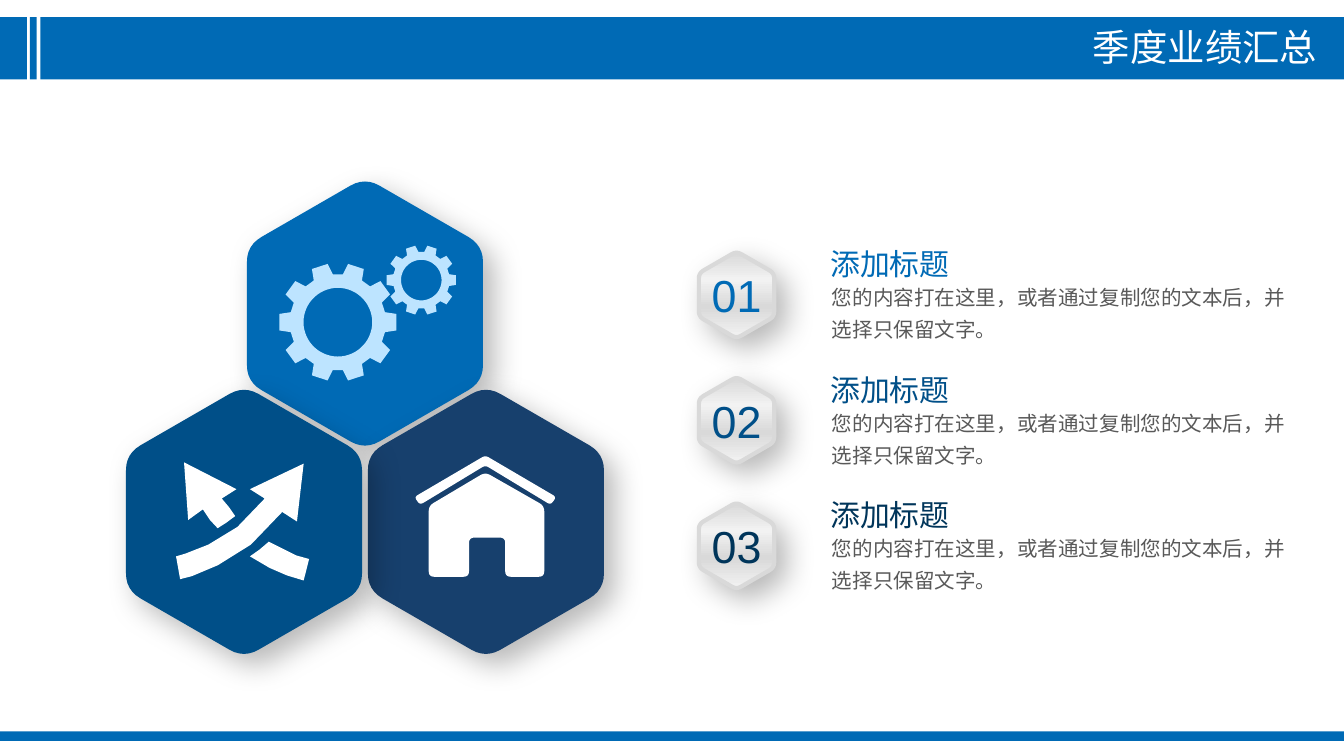
from math import cos, pi, sin

from pptx import Presentation
from pptx.dml.color import RGBColor
from pptx.enum.shapes import MSO_SHAPE
from pptx.enum.text import MSO_ANCHOR, PP_ALIGN
from pptx.oxml import parse_xml
from pptx.oxml.ns import nsdecls, qn
from pptx.util import Pt


class Theme:
    font = "Arial"
    blue = RGBColor.from_string("006AB5")
    mid = RGBColor.from_string("004F88")
    navy = RGBColor.from_string("17406D")
    deep = RGBColor.from_string("00355A")
    pale = RGBColor.from_string("BDE4FF")
    white = RGBColor.from_string("FFFFFF")
    gray = RGBColor.from_string("595959")
    silver = RGBColor.from_string("D9D9D9")
    stops = ((0, "D9D9D9"), (32, "F2F2F2"), (64, "D9D9D9"), (100, "F2F2F2"))
    header, number, title, body = Pt(20), Pt(24), Pt(16), Pt(11)


def outline(contours, color, shadow=False):
    contours = [[(Pt(x), Pt(y)) for x, y in c] for c in contours]
    builder = slide.shapes.build_freeform(*contours[0][0])
    for i, c in enumerate(contours):
        if i:
            builder.move_to(*c[0])
        builder.add_line_segments(c[1:], close=True)
    s = builder.convert_to_shape()
    s.fill.solid()
    s.fill.fore_color.rgb = color
    s.line.fill.background()
    s.shadow.inherit = False
    if shadow:
        s._element.spPr.find(qn("a:effectLst")).append(parse_xml(
            f'<a:outerShdw {nsdecls("a")} blurRad="{Pt(16)}" dist="{Pt(8)}" dir="2700000" '
            'algn="tl" rotWithShape="0"><a:srgbClr val="000000">'
            '<a:alpha val="28000"/></a:srgbClr></a:outerShdw>'))
    return s


def rounded(corners, cut):
    points = []
    for i, (x, y) in enumerate(corners):
        ends = []
        for nx, ny in (corners[i - 1], corners[(i + 1) % len(corners)]):
            f = cut / ((nx - x) ** 2 + (ny - y) ** 2) ** 0.5
            ends.append((x + f * (nx - x), y + f * (ny - y)))
        (ax, ay), (bx, by) = ends
        for t in (0, 0.17, 0.33, 0.5, 0.67, 0.83, 1):
            u = 1 - t
            points.append((u * u * ax + 2 * u * t * x + t * t * bx,
                           u * u * ay + 2 * u * t * y + t * t * by))
    return points


prs = Presentation()
prs.slide_width, prs.slide_height = Pt(720), Pt(405)
slide = prs.slides.add_slide(prs.slide_layouts[6])

for x, y, w, h in ((21.6, 9.2, 698.4, 33.4), (0, 9.2, 14.4, 33.4),
                   (16, 9.2, 3.6, 33.4), (0, 391.8, 720, 5.2)):
    s = slide.shapes.add_shape(MSO_SHAPE.RECTANGLE, Pt(x), Pt(y), Pt(w), Pt(h))
    s.shadow.inherit = False
    s.fill.solid()
    s.fill.fore_color.rgb = Theme.blue
    s.line.fill.background()

unit_hexagon = [(cos(pi / 6 + k * pi / 3), sin(pi / 6 + k * pi / 3)) for k in range(6)]
for cx, cy, color in ((195.5, 168, Theme.blue), (260.3, 279.6, Theme.navy),
                      (130.7, 279.6, Theme.mid)):
    corners = [(cx + 73 * x, cy + 73 * y) for x, y in unit_hexagon]
    outline([rounded(corners, 9)], color, shadow=True)

for cx, cy, scale in ((181, 172.6, 1), (225.7, 150.1, 0.59)):
    teeth = []
    for tooth in range(10):
        for degrees, radius in ((-12, 25.8), (-8, 31.7), (8, 31.7), (12, 25.8)):
            a = (36 * tooth + degrees) * pi / 180
            teeth.append((cx + scale * radius * cos(a), cy + scale * radius * sin(a)))
    hole = [(cx + scale * 18.4 * cos(k * pi / 30), cy + scale * 18.4 * sin(k * pi / 30))
            for k in range(60)]
    outline([teeth, hole], Theme.pale)

house = [(260, 253), (291.6, 271), (291.6, 309), (270.7, 309), (270.7, 288),
         (251.3, 288), (251.3, 309), (229.7, 309), (229.7, 271)]
roof = [(260, 244), (298, 266.3), (295, 270.5), (260, 249.3), (225, 270.5), (222, 266.3)]
outline([rounded(house, 3)], Theme.white)
outline([rounded(roof, 2)], Theme.white)

long_arrow = [(162.7, 248.4), (133.9, 262.1), (141.8, 267.1), (127.2, 282.3),
              (111.6, 291.8), (99.3, 296.6), (94.3, 298.1), (96.5, 310.3),
              (102.8, 308.7), (116.8, 302.8), (134.4, 291.8), (151.2, 274.3),
              (159.1, 279.4)]
short_arrow = [(98.6, 247.7), (100.8, 278.6), (108.7, 272.9), (112.5, 278.6),
               (116.6, 283), (121.3, 280), (126, 276.5), (122.6, 271.6),
               (118.8, 267.1), (126.7, 262.1)]
arrow_tail = [(144, 290.2), (139, 294.5), (133.9, 298.1), (144.5, 304.3),
              (153.7, 308.3), (162.7, 311), (165.6, 299.5), (158.8, 297.6)]
outline([long_arrow, short_arrow, arrow_tail], Theme.white)

texts = [("季度业绩汇总", 405.4, 9.4, 307.4, 31.5, Theme.header, Theme.white)]
for i, color in enumerate((Theme.blue, Theme.mid, Theme.deep)):
    dy = 67.2 * i
    corners = [(394.6 + 23.3 * x, 158 + dy + 23.3 * y) for x, y in unit_hexagon]
    s = outline([rounded(corners, 2.9)], Theme.silver, shadow=True)
    stops = "".join(f'<a:gs pos="{pos * 1000}"><a:srgbClr val="{c}"/></a:gs>'
                    for pos, c in Theme.stops)
    spPr = s._element.spPr
    spPr.replace(spPr.find(qn("a:solidFill")), parse_xml(
        f'<a:gradFill {nsdecls("a")} rotWithShape="1"><a:gsLst>{stops}</a:gsLst>'
        '<a:lin ang="5400000" scaled="0"/></a:gradFill>'))
    s.line.color.rgb = Theme.silver
    s.line.width = Pt(2.25)
    tf = s.text_frame
    tf.word_wrap = True
    tf.vertical_anchor = MSO_ANCHOR.MIDDLE
    tf.margin_left = tf.margin_right = Pt(5)
    tf.margin_top = tf.margin_bottom = Pt(2.9)
    p = tf.paragraphs[0]
    p.text = f"{i + 1:02}"
    p.alignment = PP_ALIGN.CENTER
    p.font.name, p.font.size = Theme.font, Theme.number
    p.font.color.rgb = color
    texts.append(("添加标题", 437.8, 128.3 + dy, 79.2, 26.6, Theme.title, color))
    texts.append(("您的内容打在这里，或者通过复制您的文本后，并选择只保留文字。",
                  445.7, 149 + dy, 255.6, 36.7, Theme.body, Theme.gray))

for text, x, y, w, h, size, color in texts:
    s = slide.shapes.add_textbox(Pt(x), Pt(y), Pt(w), Pt(h))
    tf = s.text_frame
    tf.word_wrap = size != Theme.title
    p = tf.paragraphs[0]
    p.text = text
    p.font.name, p.font.size = Theme.font, size
    p.font.color.rgb = color
    if size == Theme.header:
        p.alignment = PP_ALIGN.RIGHT
    if size == Theme.body:
        tf.margin_left = tf.margin_top = 0
        p.line_spacing = 1.3

prs.save("out.pptx")
